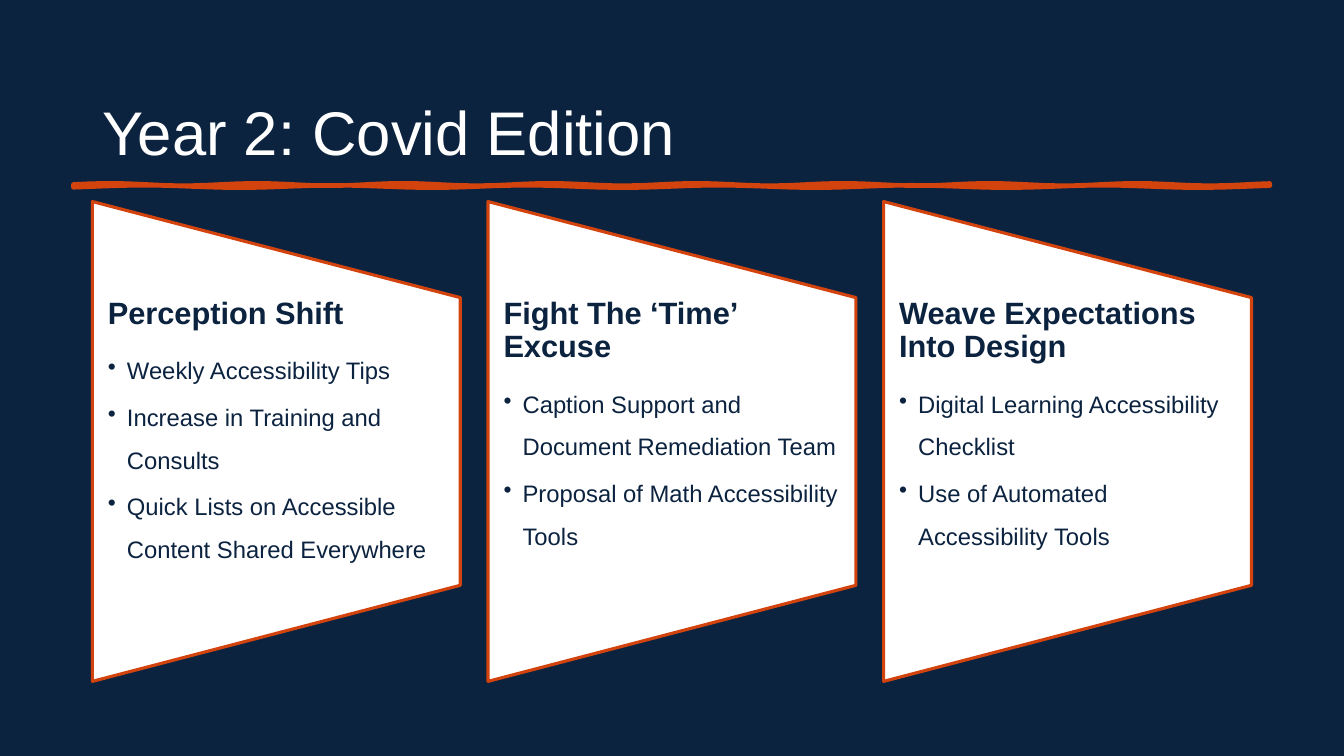
from math import sin

from lxml.etree import SubElement as Sub
from pptx import Presentation
from pptx.dml.color import RGBColor as Rgb
from pptx.enum.text import MSO_ANCHOR as Anchor, MSO_AUTO_SIZE as Auto, PP_ALIGN as Align
from pptx.oxml.ns import qn
from pptx.util import Cm, Pt

HUES = {"navy": "0C2340", "rust": "D3430D", "white": "FFFFFF"}
CARDS = [
    ("Perception Shift", [
        "Weekly Accessibility Tips",
        "Increase in Training and Consults",
        "Quick Lists on Accessible Content Shared Everywhere",
    ]),
    ("Fight The ‘Time’ Excuse", [
        "Caption Support and Document Remediation Team",
        "Proposal of Math Accessibility Tools",
    ]),
    ("Weave Expectations Into Design", [
        "Digital Learning Accessibility Checklist",
        "Use of Automated Accessibility Tools",
    ]),
]
LEFT, TOP, WIDE, HIGH, SLOPE, STEP = 2.33, 5.08, 9.27, 12.09, 2.42, 9.97


def put(item, vals):
    for key, val in vals.items():
        setattr(item, key, val)


class Deck:
    font = "Arial"
    frame = {"word_wrap": True, "auto_size": Auto.NONE}
    inset = {"margin_left": Cm(0.39), "margin_right": Cm(0.41),
             "margin_top": Cm(SLOPE), "margin_bottom": Cm(SLOPE),
             "vertical_anchor": Anchor.TOP}
    head = {"line_spacing": 0.9, "space_after": Pt(7.7)}
    item = {"level": 1, "line_spacing": 1.5, "space_before": Pt(0), "space_after": Pt(2.55)}

    def __init__(self):
        self.show = Presentation()
        put(self.show, {"slide_width": Cm(33.87), "slide_height": Cm(19.05)})
        self.slide = self.show.slides.add_slide(self.show.slide_layouts[5])
        self.paint(self.slide.background.fill, "navy")

    def paint(self, fill, hue):
        fill.solid()
        fill.fore_color.rgb = Rgb.from_string(HUES[hue])

    def label(self, para, text, size, hue, bold, form):
        put(para, {"alignment": Align.LEFT, **form})
        run = para.add_run()
        run.text = text
        put(run.font, {"name": self.font, "size": Pt(size), "bold": bold})
        run.font.color.rgb = Rgb.from_string(HUES[hue])

    def title(self, text):
        box = self.slide.shapes.title
        put(box, {"left": Cm(LEFT), "top": Cm(2.13), "width": Cm(29.21), "height": Cm(2.57)})
        put(box.text_frame, {**self.frame, "vertical_anchor": Anchor.MIDDLE})
        self.label(box.text_frame.paragraphs[0], text, 44, "white", False, {"line_spacing": 0.9})

    def outline(self, spots, fill, width):
        spots = [(Cm(x), Cm(y)) for x, y in spots]
        pen = self.slide.shapes.build_freeform(*spots[0], scale=1.0)
        pen.add_line_segments(spots[1:], close=True)
        shape = pen.convert_to_shape()
        shape.shadow.inherit = False
        self.paint(shape.fill, fill)
        self.paint(shape.line.fill, "rust")
        shape.line.width = Pt(width)
        return shape

    def rule(self, left, top, width):
        xs = [left + width * n / 80 for n in range(81)]
        upper = [(x, top + 0.03 * sin(1.7 * x)) for x in xs]
        lower = [(x, top + 0.05 + 0.03 * sin(1.3 * x)) for x in reversed(xs)]
        self.outline(upper + lower, "rust", 3.25)

    def card(self, left, head, items):
        right, base = left + WIDE, TOP + HIGH
        spots = [(left, base), (left, TOP), (right, TOP + SLOPE), (right, base - SLOPE)]
        frame = self.outline(spots, "white", 2.25).text_frame
        put(frame, {**self.frame, **self.inset})
        self.label(frame.paragraphs[0], head, 22, "navy", True, self.head)
        for text in items:
            para = frame.add_paragraph()
            self.label(para, text, 17, "navy", False, self.item)
            self.bullet(para)

    def bullet(self, para):
        props = para._p.get_or_add_pPr()
        props.set("marL", str(Cm(0.48)))
        props.set("indent", str(-Cm(0.48)))
        Sub(props, qn("a:buChar")).set("char", "•")


def main():
    deck = Deck()
    deck.rule(1.85, 4.65, 30.15)
    deck.title("Year 2: Covid Edition")
    for n, (head, items) in enumerate(CARDS):
        deck.card(LEFT + n * STEP, head, items)
    deck.show.save("out.pptx")


if __name__ == "__main__":
    main()
